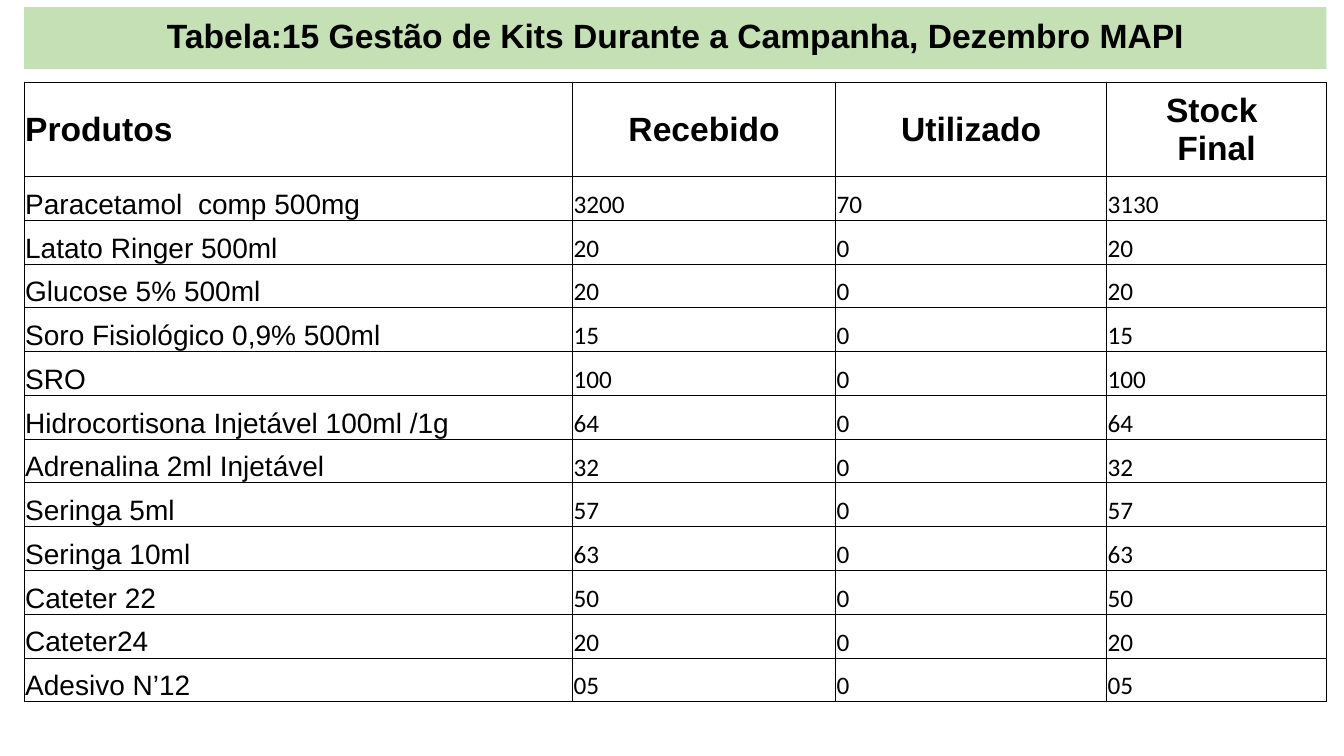
from lxml import etree
from pptx import Presentation
from pptx.dml.color import RGBColor
from pptx.enum import shapes, text
from pptx.oxml import ns
from pptx.util import Pt

COLORS = {"ink": "000000", "paper": "FFFFFF", "banner": "C5E0B4"}
LEFT, WIDTH = 17.3, 930.2
HEADINGS = ["Produtos", "Recebido", "Utilizado", "Stock \nFinal"]
PRODUCTS = [
    ("Paracetamol  comp 500mg", "3200", "70", "3130"),
    ("Latato Ringer 500ml", "20", "0", "20"),
    ("Glucose 5% 500ml", "20", "0", "20"),
    ("Soro Fisiológico 0,9% 500ml", "15", "0", "15"),
    ("SRO", "100", "0", "100"),
    ("Hidrocortisona Injetável 100ml /1g", "64", "0", "64"),
    ("Adrenalina 2ml Injetável", "32", "0", "32"),
    ("Seringa 5ml", "57", "0", "57"),
    ("Seringa 10ml", "63", "0", "63"),
    ("Cateter 22", "50", "0", "50"),
    ("Cateter24", "20", "0", "20"),
    ("Adesivo N’12", "05", "0", "05"),
]
COLUMN_WIDTHS = [391.7, 187.9, 193.6, 157]
HEADER_HEIGHT, ROW_HEIGHT = 67.4, 31.28


def write(frame, words, size, font="Arial", bold=False, centered=False, spacing=None):
    frame.text = words
    for para in frame.paragraphs:
        para.alignment = text.PP_ALIGN.CENTER if centered else text.PP_ALIGN.LEFT
        para.line_spacing = spacing
        for span in para.runs:
            span.font.size = Pt(size)
            span.font.name = font
            span.font.bold = bold
            span.font.color.rgb = RGBColor.from_string(COLORS["ink"])


def add_borders(cell):
    properties = cell._tc.get_or_add_tcPr()
    for position, side in enumerate(("lnL", "lnR", "lnT", "lnB")):
        line = etree.Element(ns.qn(f"a:{side}"), w=str(Pt(0.5)))
        fill = etree.SubElement(line, ns.qn("a:solidFill"))
        etree.SubElement(fill, ns.qn("a:srgbClr"), val=COLORS["ink"])
        properties.insert(position, line)


deck = Presentation()
deck.slide_width, deck.slide_height = Pt(960), Pt(540)
page = deck.slides.add_slide(deck.slide_layouts[6])

banner = page.shapes.add_shape(
    shapes.MSO_SHAPE.RECTANGLE, Pt(LEFT), Pt(5.2), Pt(WIDTH), Pt(44))
banner.shadow.inherit = False
banner.fill.solid()
banner.fill.fore_color.rgb = RGBColor.from_string(COLORS["banner"])
banner.line.fill.background()
banner.text_frame.word_wrap = True
banner.text_frame.vertical_anchor = text.MSO_ANCHOR.MIDDLE
write(banner.text_frame, "Tabela:15 Gestão de Kits Durante a Campanha, Dezembro MAPI",
      24, bold=True, centered=True, spacing=0.9)

rows = [HEADINGS, *PRODUCTS]
table = page.shapes.add_table(
    len(rows), len(HEADINGS), Pt(LEFT), Pt(58.6), Pt(WIDTH),
    Pt(HEADER_HEIGHT + ROW_HEIGHT * len(PRODUCTS))).table
table.first_row = table.horz_banding = False
for column, width in zip(table.columns, COLUMN_WIDTHS):
    column.width = Pt(width)

for row_index, row in enumerate(rows):
    is_header = row_index == 0
    table.rows[row_index].height = Pt(HEADER_HEIGHT if is_header else ROW_HEIGHT)
    for column_index, words in enumerate(row):
        is_product = column_index == 0
        cell = table.cell(row_index, column_index)
        cell.margin_left = cell.margin_right = cell.margin_top = Pt(0.7)
        cell.margin_bottom = Pt(0)
        cell.fill.solid()
        cell.fill.fore_color.rgb = RGBColor.from_string(COLORS["paper"])
        add_borders(cell)
        if is_header:
            cell.vertical_anchor = text.MSO_ANCHOR.MIDDLE
            write(cell.text_frame, words, 24, bold=True, centered=not is_product)
        else:
            cell.vertical_anchor = text.MSO_ANCHOR.BOTTOM
            write(cell.text_frame, words, 20 if is_product else 18,
                  font="Arial" if is_product else "Calibri")

deck.save("out.pptx")
